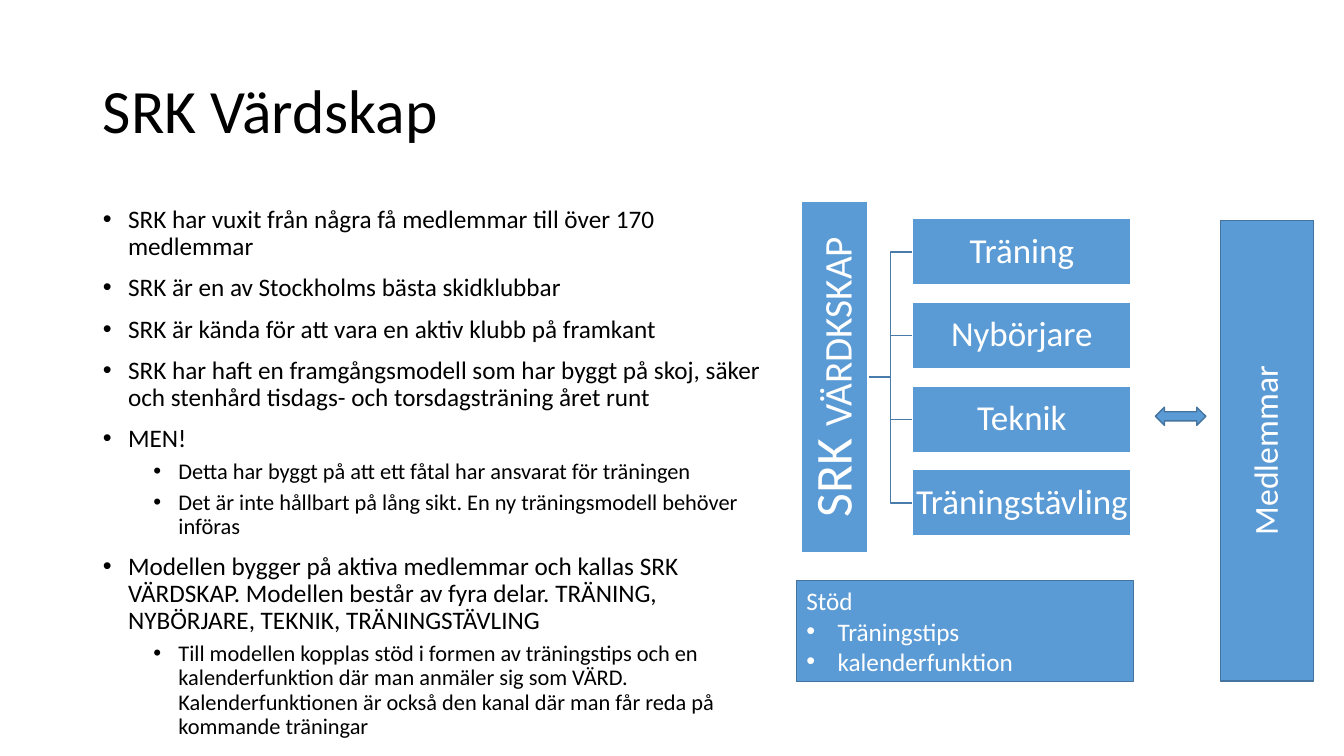
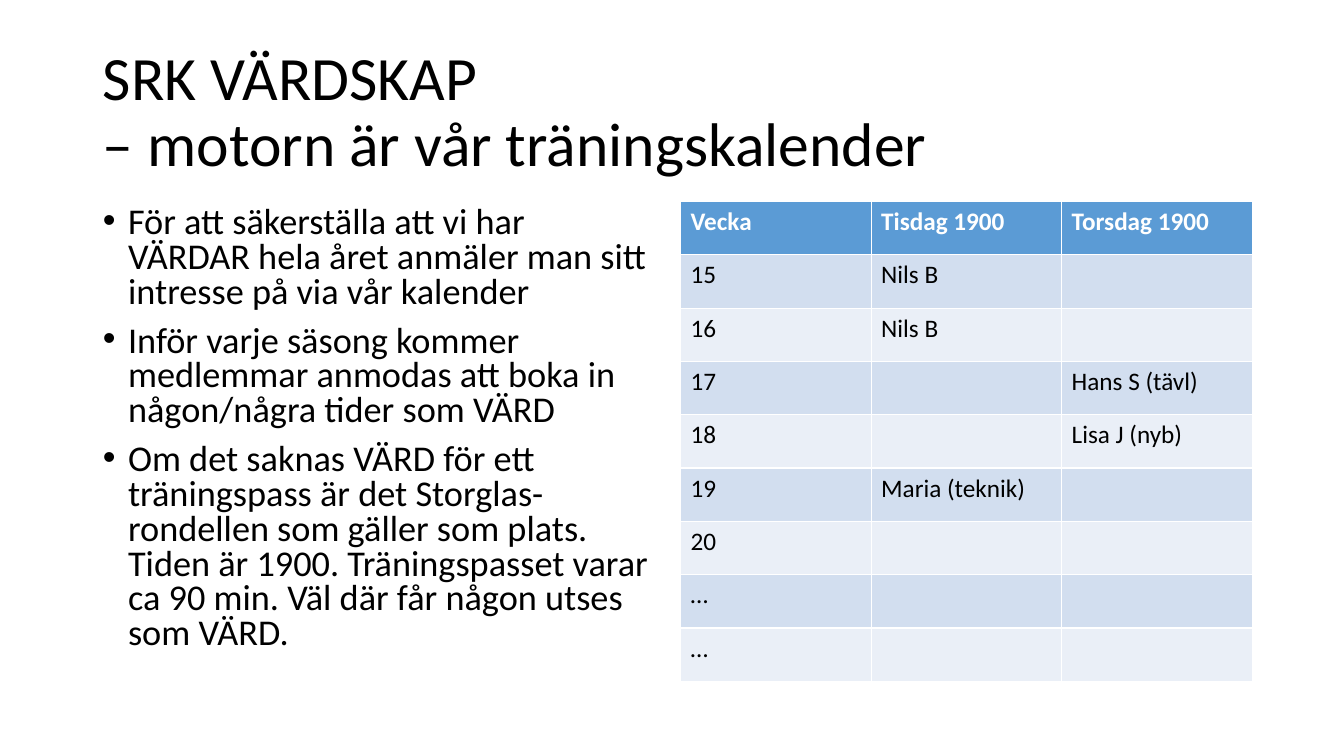
from lxml.etree import SubElement
from pptx import Presentation
from pptx.dml.color import RGBColor
from pptx.enum.shapes import MSO_CONNECTOR as Connector, MSO_SHAPE as Shape
from pptx.enum.text import MSO_ANCHOR as Anchor, MSO_AUTO_SIZE as AutoSize, PP_ALIGN as Align
from pptx.oxml.ns import qn
from pptx.util import Inches, Pt

FONT = "Calibri"
COLORS = {
    "text": "000000",
    "white": "FFFFFF",
    "blue": "5B9BD5",
    "outline": "43739E",
    "branch": "497CAB",
    "band_dark": "D2DEEF",
    "band_light": "EAEFF7",
}

HOST_POINTS = [
    (0, "SRK har vuxit från några få medlemmar till över 170 medlemmar"),
    (0, "SRK är en av Stockholms bästa skidklubbar"),
    (0, "SRK är kända för att vara en aktiv klubb på framkant"),
    (0, "SRK har haft en framgångsmodell som har byggt på skoj, säker och stenhård "
        "tisdags- och torsdagsträning året runt"),
    (0, "MEN!"),
    (1, "Detta har byggt på att ett fåtal har ansvarat för träningen"),
    (1, "Det är inte hållbart på lång sikt. En ny träningsmodell behöver införas"),
    (0, "Modellen bygger på aktiva medlemmar och kallas SRK VÄRDSKAP. Modellen består "
        "av fyra delar. TRÄNING, NYBÖRJARE, TEKNIK, TRÄNINGSTÄVLING"),
    (1, "Till modellen kopplas stöd i formen av träningstips och en kalenderfunktion "
        "där man anmäler sig som VÄRD. Kalenderfunktionen är också den kanal där man "
        "får reda på kommande träningar"),
]
CALENDAR_POINTS = [
    (0, "För att säkerställa att vi har VÄRDAR hela året anmäler man sitt intresse på "
        "via vår kalender"),
    (0, "Inför varje säsong kommer medlemmar anmodas att boka in någon/några tider som VÄRD"),
    (0, "Om det saknas VÄRD för ett träningspass är det Storglas-rondellen som gäller som "
        "plats. Tiden är 1900. Träningspasset varar ca 90 min. Väl där får någon utses "
        "som VÄRD."),
]
CALENDAR = [
    ("Vecka", "Tisdag 1900", "Torsdag 1900"),
    ("15", "Nils B", ""),
    ("16", "Nils B", ""),
    ("17", "", "Hans S (tävl)"),
    ("18", "", "Lisa J (nyb)"),
    ("19", "Maria (teknik)", ""),
    ("20", "", ""),
    ("…", "", ""),
    ("…", "", ""),
]


def rgb(color):
    return RGBColor.from_string(COLORS[color])


def place(element, left, top, width, height):
    element.left, element.top = Inches(left), Inches(top)
    element.width, element.height = Inches(width), Inches(height)


def add_run(paragraph, text, size, color="text", bold=False):
    run = paragraph.add_run()
    run.text = text
    run.font.name = FONT
    run.font.size = Pt(size)
    run.font.bold = bold
    run.font.color.rgb = rgb(color)


def add_bullet(paragraph, margin, hanging):
    properties = paragraph._p.get_or_add_pPr()
    properties.set("marL", str(Inches(margin)))
    properties.set("indent", str(-Inches(hanging)))
    SubElement(properties, qn("a:buFont"), typeface="Arial")
    SubElement(properties, qn("a:buChar"), char="•")


def next_paragraph(frame, index):
    return frame.add_paragraph() if index else frame.paragraphs[0]


def add_title(slide, lines):
    title = slide.shapes.title
    place(title, 0.92, 0.4, 11.5, 1.45)
    frame = title.text_frame
    frame.auto_size = AutoSize.NONE
    frame.vertical_anchor = Anchor.MIDDLE
    paragraph = frame.paragraphs[0]
    paragraph.alignment = Align.LEFT
    paragraph.line_spacing = 0.9
    for index, line in enumerate(lines):
        if index:
            paragraph.add_line_break()
        add_run(paragraph, line, 44)


def add_points(slide, points, width, sizes, spacing):
    body = slide.placeholders[1]
    place(body, 0.92, 2, width, 4.76)
    frame = body.text_frame
    frame.auto_size = AutoSize.NONE
    for index, (level, text) in enumerate(points):
        paragraph = next_paragraph(frame, index)
        paragraph.level = level
        paragraph.line_spacing = spacing
        paragraph.space_before = Pt((10, 5)[level] if index else 0)
        add_bullet(paragraph, 0.25 + 0.5 * level, 0.25)
        add_run(paragraph, text, sizes[level])


def add_block(slide, box, runs=(), outline="outline", rotation=0, preset=Shape.RECTANGLE):
    block = slide.shapes.add_shape(preset, *map(Inches, box))
    block.shadow.inherit = False
    block.rotation = rotation
    block.fill.solid()
    block.fill.fore_color.rgb = rgb("blue")
    block.line.color.rgb = rgb(outline)
    block.line.width = Pt(1)
    frame = block.text_frame
    frame.word_wrap = False
    frame.vertical_anchor = Anchor.MIDDLE
    frame.margin_left = frame.margin_right = Inches(0.02)
    paragraph = frame.paragraphs[0]
    paragraph.alignment = Align.CENTER
    paragraph.line_spacing = 0.9
    for text, size in runs:
        add_run(paragraph, text, size, "white")
    return block


def add_branch(slide, start, end):
    branch = slide.shapes.add_connector(Connector.ELBOW, *map(Inches, start + end))
    branch.line.color.rgb = rgb("branch")
    branch.line.width = Pt(1)
    SubElement(branch._element.spPr, qn("a:effectLst"))


def add_host_model(slide):
    parts = ["Träning", "Nybörjare", "Teknik", "Träningstävling"]
    left, top, width, height, pitch = 9.05, 2.17, 2.17, 0.66, 0.83
    tops = [top + pitch * index for index in range(len(parts))]
    for part_top in tops:
        add_branch(slide, (8.61, 3.74), (left, part_top + height / 2))
    add_block(slide, (6.54, 3.41, 3.48, height),
              [("SRK ", 37), ("VÄRDKSKAP", 28)], "white", 270)
    for part, part_top in zip(parts, tops):
        add_block(slide, (left, part_top, width, height), [(part, 25)], "white")


def add_support(slide):
    frame = add_block(slide, (7.9, 5.76, 3.34, 1)).text_frame
    frame.word_wrap = True
    frame.margin_left = frame.margin_right = Inches(0.1)
    for index, text in enumerate(["Stöd", "Träningstips", "kalenderfunktion"]):
        paragraph = next_paragraph(frame, index)
        paragraph.alignment = Align.LEFT
        paragraph.line_spacing = 1.0
        if index:
            add_bullet(paragraph, 0.31, 0.31)
        add_run(paragraph, text, 18, "white")


def add_calendar(slide, rows):
    box = map(Inches, (6.75, 2, 5.67, 4.76))
    table = slide.shapes.add_table(len(rows), len(rows[0]), *box).table
    for row_index, row in enumerate(rows):
        header = row_index == 0
        band = "band_dark" if row_index % 2 else "band_light"
        for column_index, text in enumerate(row):
            cell = table.cell(row_index, column_index)
            cell.fill.solid()
            cell.fill.fore_color.rgb = rgb("blue" if header else band)
            if text:
                add_run(cell.text_frame.paragraphs[0], text, 18,
                        "white" if header else "text", header)


def main():
    deck = Presentation()
    deck.slide_width, deck.slide_height = Inches(13.33), Inches(7.5)
    layout = deck.slide_layouts[1]

    hosting = deck.slides.add_slide(layout)
    add_title(hosting, ["SRK Värdskap"])
    add_points(hosting, HOST_POINTS, 6.84, (18, 16), 0.9)
    add_host_model(hosting)
    add_support(hosting)
    add_block(hosting, (10.28, 4.01, 4.57, 0.92), [("Medlemmar", 24)], rotation=270)
    add_block(hosting, (11.46, 4.04, 0.5, 0.18), preset=Shape.LEFT_RIGHT_ARROW)

    calendar = deck.slides.add_slide(layout)
    add_title(calendar, ["SRK VÄRDSKAP ", "– motorn är vår träningskalender"])
    add_points(calendar, CALENDAR_POINTS, 5.67, (25.9,), 0.8)
    add_calendar(calendar, CALENDAR)

    deck.save("out.pptx")


if __name__ == "__main__":
    main()
